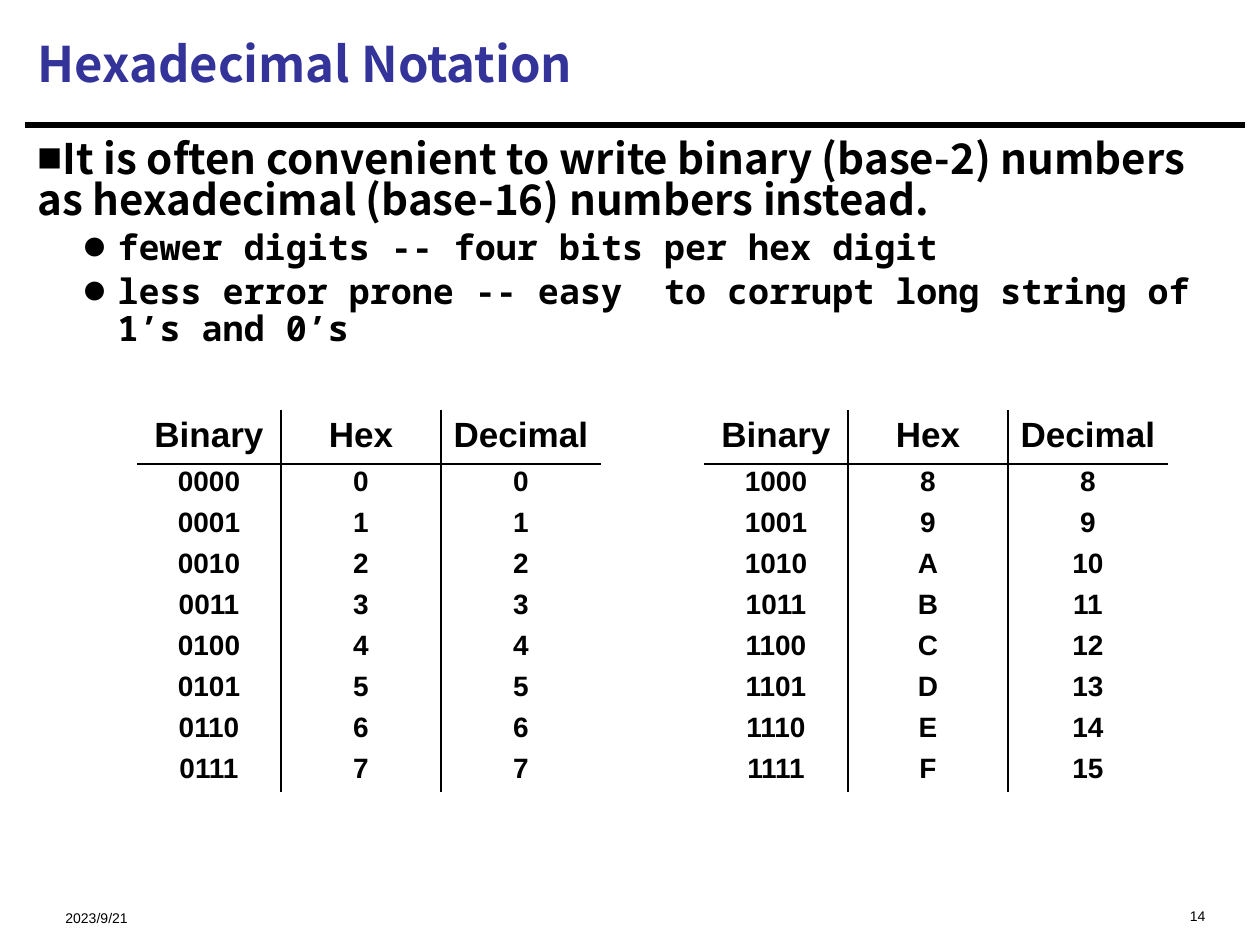
from lxml.etree import SubElement
from pptx import Presentation
from pptx.dml.color import RGBColor
from pptx.enum.shapes import MSO_CONNECTOR
from pptx.enum.text import MSO_ANCHOR, MSO_AUTO_SIZE as AUTO_SIZE, PP_ALIGN as ALIGN
from pptx.oxml.ns import qn
from pptx.util import Pt

BLACK = RGBColor(0x00, 0x00, 0x00)
NAVY = RGBColor(0x33, 0x33, 0x99)
SANS = "Arial"
HEADING = "Noto Sans CJK SC"
MONO = "Noto Sans Mono"
EMU_PER_PX = 914400 / 126


def px(length):
    return round(length * EMU_PER_PX)


class SlideBuilder:
    def __init__(self, deck):
        self.slide = deck.slides.add_slide(deck.slide_layouts[1])

    def run(self, paragraph, text, size, font=SANS, color=BLACK, bold=True):
        run = paragraph.add_run()
        run.text = text
        run.font.size = Pt(size)
        run.font.name = font
        run.font.bold = bold
        run.font.color.rgb = color
        props = run.font._element
        for script in ("a:ea", "a:cs"):
            SubElement(props, qn(script), typeface=font)

    def place(self, shape, left, top, width, height, anchor):
        shape.left, shape.top = px(left), px(top)
        shape.width, shape.height = px(width), px(height)
        frame = shape.text_frame
        frame.word_wrap = True
        frame.auto_size = AUTO_SIZE.NONE
        frame.vertical_anchor = anchor
        return frame

    def title(self, text, *box):
        frame = self.place(self.slide.shapes.title, *box, MSO_ANCHOR.MIDDLE)
        heading = frame.paragraphs[0]
        heading.alignment = ALIGN.LEFT
        self.run(heading, text, 28, HEADING, NAVY)

    def body(self, *box):
        return self.place(self.slide.placeholders[1], *box, MSO_ANCHOR.TOP)

    def bullet(self, paragraph, lines, mark, size, font, level, margin, indent, spacing, before):
        paragraph.level = level
        paragraph.alignment = ALIGN.LEFT
        paragraph.line_spacing = spacing
        paragraph.space_before = Pt(before)
        for number, line in enumerate(lines):
            if number:
                paragraph.add_line_break()
            self.run(paragraph, line, size, font)
        props = paragraph._p.get_or_add_pPr()
        props.set("marL", str(px(margin)))
        props.set("indent", str(px(indent)))
        SubElement(props, qn("a:buSzPct"), val="60000")
        SubElement(props, qn("a:buFont"), typeface=HEADING)
        SubElement(props, qn("a:buChar"), char=mark)

    def rule(self, left, right, y, weight):
        rule = self.slide.shapes.add_connector(
            MSO_CONNECTOR.STRAIGHT, px(left), px(y), px(right), px(y))
        rule.line.color.rgb = BLACK
        rule.line.width = Pt(weight)
        SubElement(rule._element.spPr, qn("a:effectLst"))

    def footer(self, text, alignment, anchor, *box):
        frame = self.place(self.slide.shapes.add_textbox(0, 0, 0, 0), *box, anchor)
        line = frame.paragraphs[0]
        line.alignment = alignment
        line.space_before = Pt(10)
        self.run(line, text, 8, bold=False)

    def border(self, cell, side, visible):
        edge = SubElement(cell._tc.get_or_add_tcPr(), qn("a:ln" + side), w=str(Pt(1)))
        if visible:
            fill = SubElement(edge, qn("a:solidFill"))
            SubElement(fill, qn("a:srgbClr"), val=str(BLACK))
        else:
            SubElement(edge, qn("a:noFill"))

    def table(self, rows, left, top, widths, heights):
        grid = self.slide.shapes.add_table(
            len(rows), len(widths), px(left), px(top),
            px(sum(widths)), px(sum(heights))).table
        grid.first_row = grid.horz_banding = False
        for column, width in zip(grid.columns, widths):
            column.width = px(width)
        for r, values in enumerate(rows):
            grid.rows[r].height = px(heights[r])
            for c, value in enumerate(values):
                cell = grid.cell(r, c)
                entry = cell.text_frame.paragraphs[0]
                entry.alignment = ALIGN.CENTER
                if r:
                    entry.line_spacing = 0.85
                self.run(entry, value, 16 if r else 20)
                self.border(cell, "L", c > 0)
                self.border(cell, "R", c < len(widths) - 1)
                self.border(cell, "T", r == 1)
                self.border(cell, "B", r == 0)
                cell.fill.background()


def main():
    deck = Presentation()
    deck.slide_width, deck.slide_height = px(1260), px(945)
    builder = SlideBuilder(deck)

    builder.rule(25, 1245, 125, 3.75)
    builder.footer("2023/9/21", ALIGN.LEFT, MSO_ANCHOR.MIDDLE, 53, 901, 315, 34)
    builder.footer("14", ALIGN.RIGHT, MSO_ANCHOR.TOP, 840, 901, 378, 34)
    builder.title("Hexadecimal Notation", 25, 10, 1218, 106)

    body = builder.body(25, 135, 1218, 755)
    builder.bullet(
        body.paragraphs[0],
        ["It is often convenient to write binary (base-2) numbers",
         "as hexadecimal (base-16) numbers instead."],
        "■", 24, HEADING, 0, 0, 0, 0.82, 3)
    for reason in ("fewer digits -- four bits per hex digit",
                   "less error prone -- easy  to corrupt long string of 1’s and 0’s"):
        builder.bullet(body.add_paragraph(), [reason],
                       "●", 20, MONO, 1, 80, -33, 0.88, 4)

    header = ("Binary", "Hex", "Decimal")
    for left, first in ((137, 0), (704, 8)):
        numbers = [(f"{n:04b}", f"{n:X}", str(n)) for n in range(first, first + 8)]
        builder.table([header] + numbers, left, 410, (144, 160, 160), [54] + [41] * 8)

    deck.save("out.pptx")


if __name__ == "__main__":
    main()
